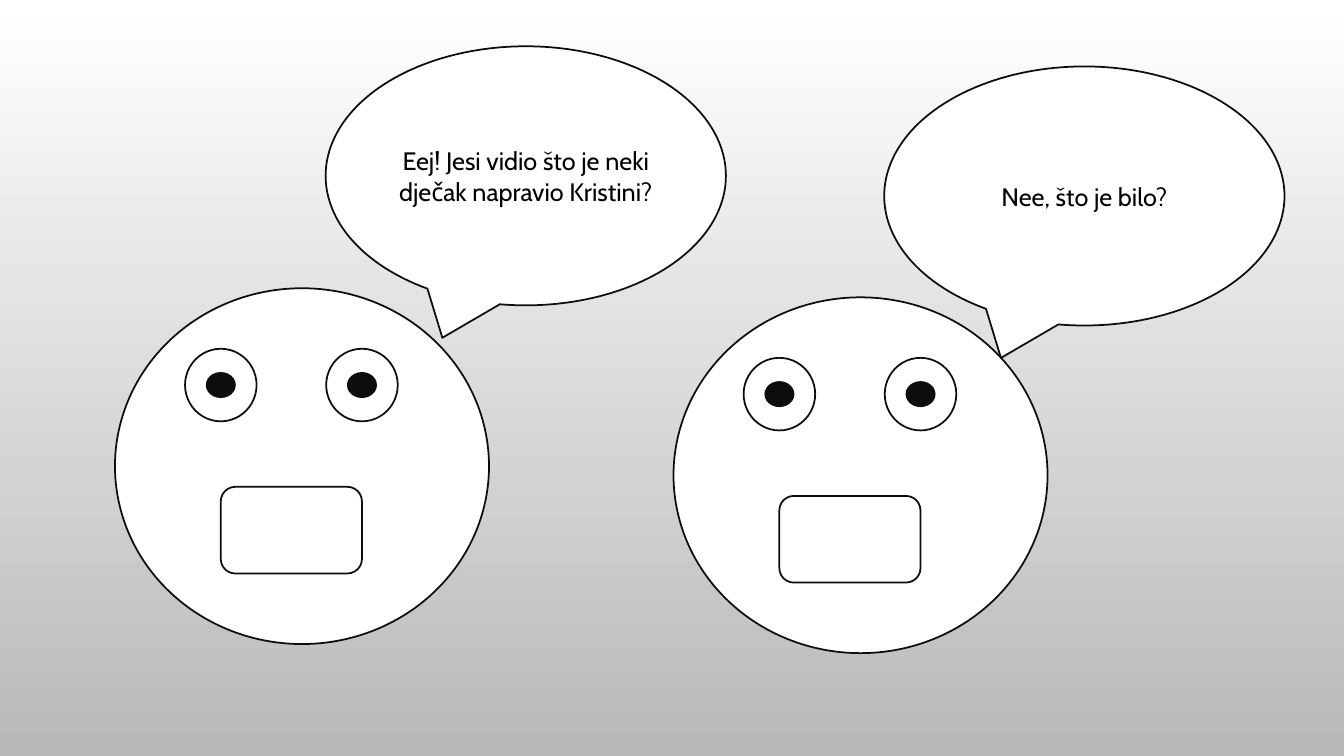
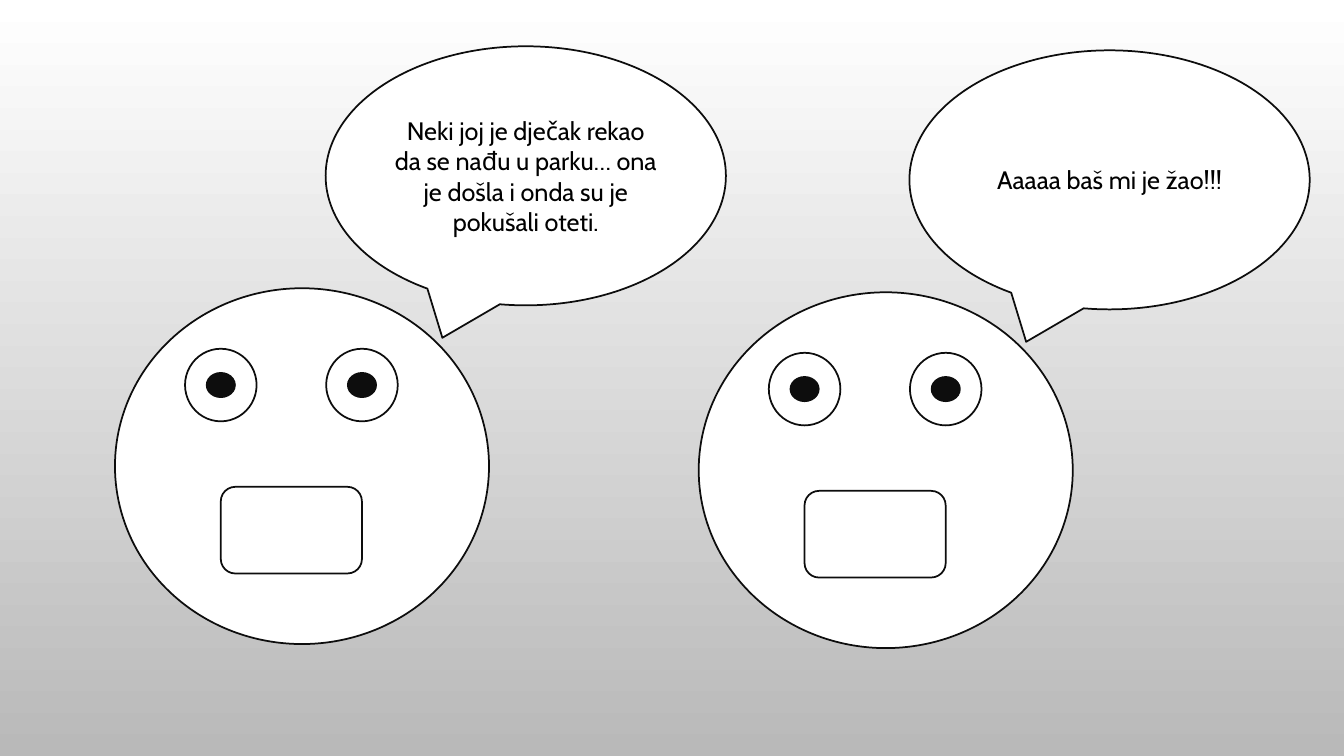
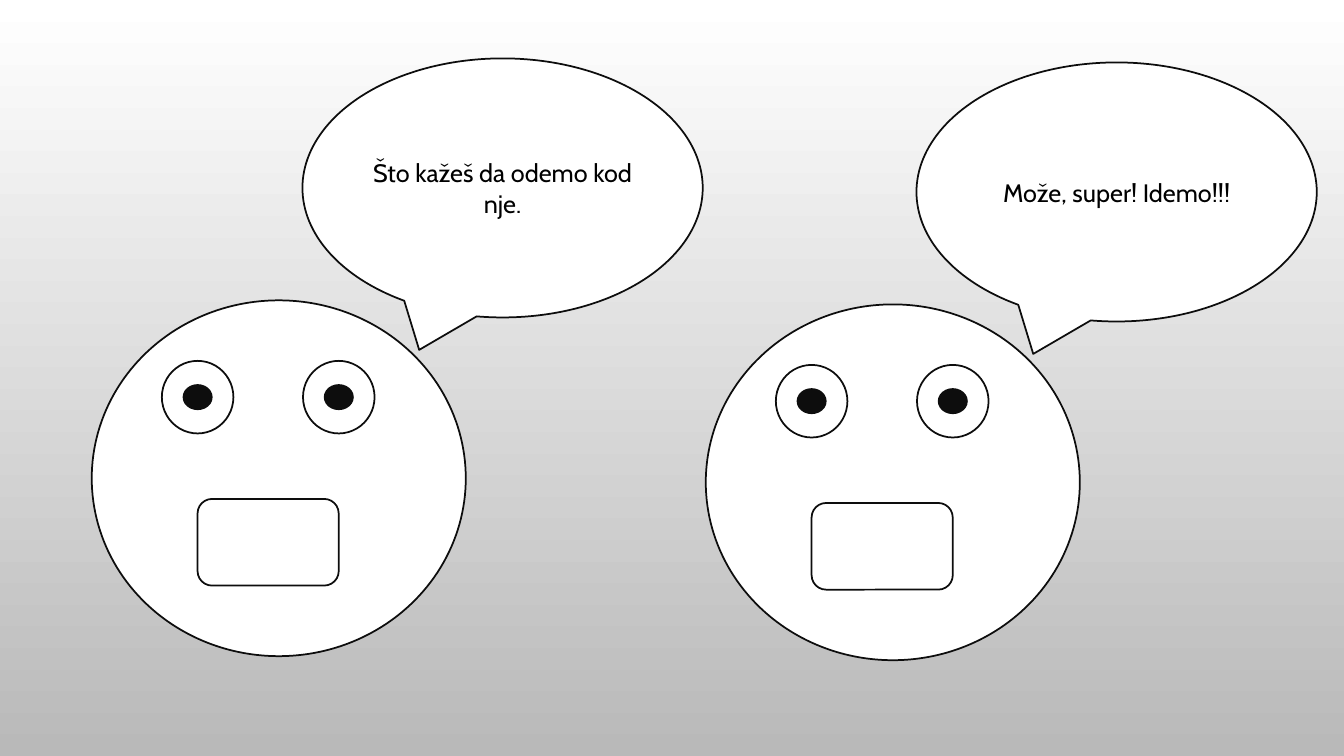
from dataclasses import dataclass

from pptx import Presentation
from pptx import util as u
from pptx.dml.color import RGBColor
from pptx.enum import shapes, text


@dataclass(frozen=True)
class Theme:
    white: RGBColor = RGBColor.from_string("FFFFFF")
    grey: RGBColor = RGBColor.from_string("B9B9B9")
    ink: RGBColor = RGBColor.from_string("0D0D0D")
    text: RGBColor = RGBColor.from_string("000000")
    font: str = "Cabin"
    text_size: u.Length = u.Pt(18)
    outline: u.Length = u.Pt(1.25)


THEME = Theme()
SHAPE = shapes.MSO_SHAPE

# Sizes in inches; offsets run from the top left corner of the head.
HEAD = (3.71, 3.53)
EYE = (0.71, 0.72)
PUPIL = (0.28, 0.24)
MOUTH = (1.4, 0.86)
BUBBLE = (3.97, 2.57)
EYE_CENTRE = (1.05, 0.96)
EYE_GAP = MOUTH[0]
MOUTH_TOP = 1.97
BUBBLE_LEFT = 2.09

# One slide per entry; each speaker is head left, head top, bubble top, words.
DIALOGUE = [
    [
        (1.14, 2.86, 0.46, "Eej! Jesi vidio što je neki dječak napravio Kristini?"),
        (6.68, 2.95, 0.66, "Nee, što je bilo?"),
    ],
    [
        (1.14, 2.86, 0.46, "Neki joj je dječak rekao da se nađu u parku… "
                           "ona je došla i onda su je pokušali oteti."),
        (6.93, 2.9, 0.5, "Aaaaa baš mi je žao!!!"),
    ],
    [
        (0.91, 2.98, 0.58, "Što kažeš da odemo kod nje."),
        (7, 3.02, 0.62, "Može, super! Idemo!!!"),
    ],
]


def set_format(target, values):
    for name, value in values.items():
        setattr(target, name, value)


def set_background(master):
    """Shade every slide from white at the top to grey at the bottom."""
    fill = master.background.fill
    fill.gradient()
    fill.gradient_angle = 270
    for stop, colour, position in zip(fill.gradient_stops, (THEME.white, THEME.grey), (0, 1)):
        stop.color.rgb = colour
        stop.position = position


def add_outlined(group, kind, left, top, size, colour=THEME.white):
    shape = group.shapes.add_shape(kind, *map(u.Inches, (left, top, *size)))
    shape.shadow.inherit = False
    shape.fill.solid()
    shape.fill.fore_color.rgb = colour
    shape.line.color.rgb = THEME.ink
    shape.line.width = THEME.outline
    return shape


def add_centred_oval(group, centre_x, centre_y, size, colour=THEME.white):
    width, height = size
    add_outlined(group, SHAPE.OVAL, centre_x - width / 2, centre_y - height / 2, size, colour)


def add_face(group, left, top):
    add_outlined(group, SHAPE.OVAL, left, top, HEAD)
    eye_x, eye_y = left + EYE_CENTRE[0], top + EYE_CENTRE[1]
    for centre_x in (eye_x, eye_x + EYE_GAP):
        add_centred_oval(group, centre_x, eye_y, EYE)
        add_centred_oval(group, centre_x, eye_y, PUPIL, THEME.ink)
    add_outlined(group, SHAPE.ROUNDED_RECTANGLE, eye_x, top + MOUTH_TOP, MOUTH)


def add_bubble(group, left, top, words):
    bubble = add_outlined(group, SHAPE.OVAL_CALLOUT, left, top, BUBBLE)
    frame = bubble.text_frame
    set_format(frame, {"word_wrap": True, "vertical_anchor": text.MSO_ANCHOR.MIDDLE})
    paragraph = frame.paragraphs[0]
    paragraph.alignment = text.PP_ALIGN.CENTER
    run = paragraph.add_run()
    run.text = words
    set_format(run.font, {"name": THEME.font, "size": THEME.text_size})
    run.font.color.rgb = THEME.text


def add_speaker(slide, left, top, bubble_top, words):
    group = slide.shapes.add_group_shape()
    add_face(group, left, top)
    add_bubble(group, left + BUBBLE_LEFT, bubble_top, words)


def main():
    presentation = Presentation()
    set_format(presentation, {"slide_width": u.Inches(13.33), "slide_height": u.Inches(7.5)})
    set_background(presentation.slide_master)
    blank = presentation.slide_layouts[6]
    for speakers in DIALOGUE:
        slide = presentation.slides.add_slide(blank)
        for speaker in speakers:
            add_speaker(slide, *speaker)
    presentation.save("out.pptx")


if __name__ == "__main__":
    main()
